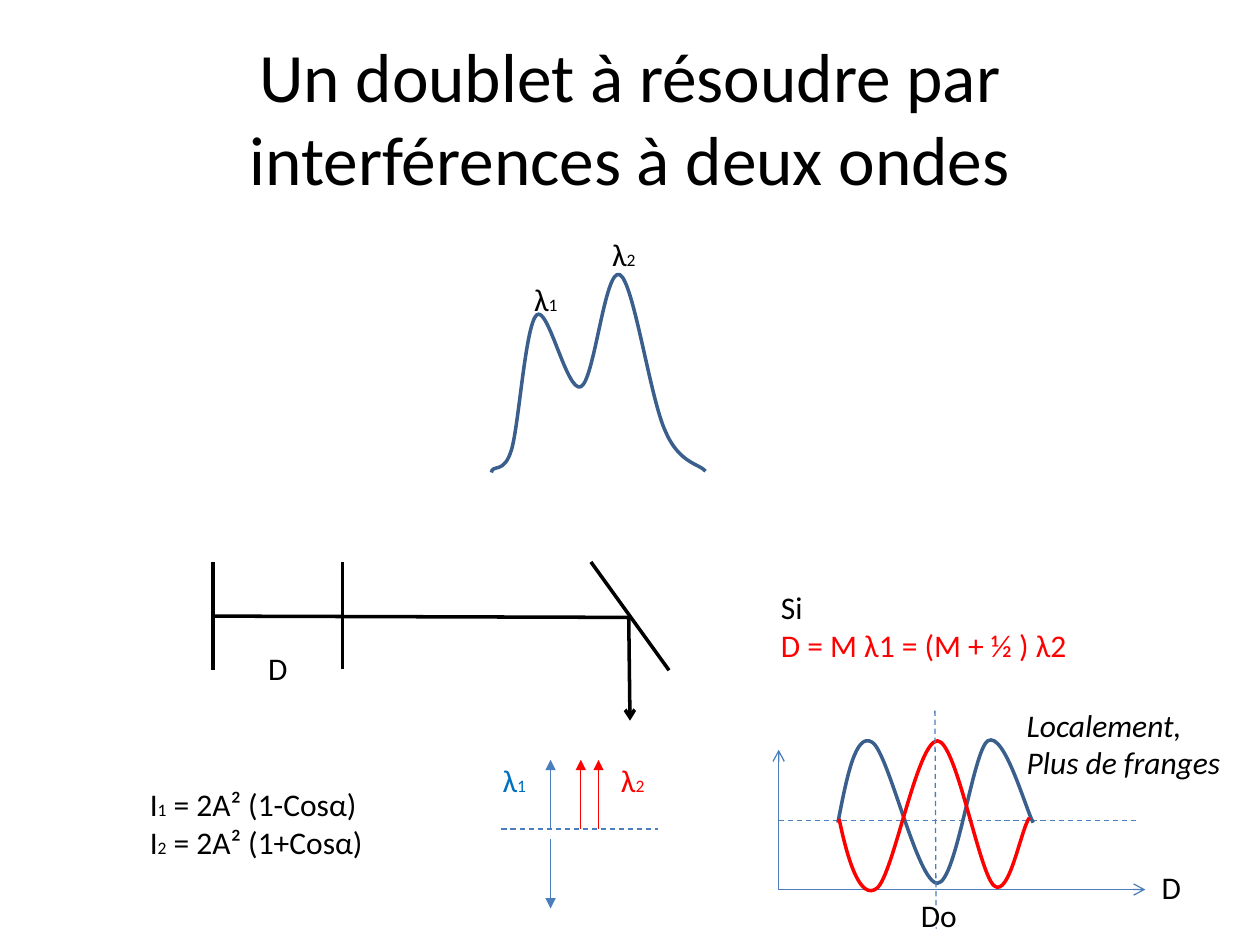
import pptx
import pptx.util
import pptx.dml.color
import pptx.enum.dml
import pptx.enum.shapes
import pptx.enum.text
import pptx.oxml
import pptx.oxml.ns
from pptx.util import Inches

RGB = pptx.dml.color.RGBColor
BLACK = RGB(0, 0, 0)
RED = RGB(0xFF, 0, 0)
BLUE = RGB(0x4B, 0x7E, 0xBC)
NAVY = RGB(0x3A, 0x5F, 0x8C)
AZURE = RGB(0, 0x70, 0xC0)
ALIGN = pptx.enum.text.PP_ALIGN
ANCHOR = pptx.enum.text.MSO_ANCHOR
FIT = pptx.enum.text.MSO_AUTO_SIZE


def add_text(slide, box, lines, size=18, align=ALIGN.LEFT, wrap=True,
             italic=False):
    """Add (text, colour) lines; parts between underscores are small."""
    shape = slide.shapes.add_textbox(*map(Inches, box))
    frame = shape.text_frame
    frame.word_wrap = wrap
    frame.auto_size = FIT.SHAPE_TO_FIT_TEXT
    for i, (text, color) in enumerate(lines):
        para = frame.paragraphs[0] if i == 0 else frame.add_paragraph()
        para.alignment = align
        for j, part in enumerate(text.split("_")):
            if not part:
                continue
            run = para.add_run()
            run.text = part
            run.font.name = "Calibri"
            run.font.size = pptx.util.Pt(10 if j % 2 else size)
            run.font.italic = italic
            run.font.color.rgb = color
    return frame


def add_line(slide, start, end, color=BLUE, width=0.75, dash=False, tip=None):
    """Add a straight line, with an arrowhead at its end if tip is given."""
    line = slide.shapes.add_connector(
        pptx.enum.shapes.MSO_CONNECTOR.STRAIGHT, *map(Inches, start + end))
    line.line.color.rgb = color
    line.line.width = pptx.util.Pt(width)
    if dash:
        line.line.dash_style = pptx.enum.dml.MSO_LINE.DASH
    props = line.element.spPr
    if tip:
        head = pptx.oxml.ns.qn("a:tailEnd")
        line.line.fill  # noqa: the a:ln element already exists here
        props.find(pptx.oxml.ns.qn("a:ln")).append(
            props.makeelement(head, {"type": tip}))
    props.append(props.makeelement(pptx.oxml.ns.qn("a:effectLst"), {}))


def add_curve(slide, start, bends, color):
    """Add a curve; each bend is two control points and an end point."""
    ends = [(Inches(x), Inches(y)) for *_, x, y in bends]
    form = slide.shapes.build_freeform(*map(Inches, start))
    form.add_line_segments(ends, close=False)
    shape = form.convert_to_shape()
    shape.shadow.inherit = False
    shape.fill.background()
    shape.line.color.rgb = color
    shape.line.width = pptx.util.Pt(2)
    qn = pptx.oxml.ns.qn
    steps = list(shape.element.iter(qn("a:lnTo")))
    for step, bend in zip(steps, bends):
        cubic = step.makeelement(qn("a:cubicBezTo"), {})
        for x, y in zip(bend[::2], bend[1::2]):
            cubic.append(step.makeelement(qn("a:pt"), {
                "x": str(Inches(x) - shape.left),
                "y": str(Inches(y) - shape.top)}))
        step.getparent().replace(step, cubic)


def draw_peaks(slide):
    add_curve(slide, (3.9, 3.75), [
        (3.91, 3.68, 4, 3.77, 4.06, 3.57),
        (4.12, 3.37, 4.17, 2.58, 4.26, 2.5),
        (4.35, 2.42, 4.5, 3.12, 4.61, 3.07),
        (4.72, 3.02, 4.8, 2.12, 4.92, 2.18),
        (5.03, 2.24, 5.16, 3.16, 5.28, 3.42),
        (5.39, 3.68, 5.55, 3.68, 5.6, 3.74)], NAVY)
    add_text(slide, (4.14, 2.17, 0.47, 0.4), [("λ_1", BLACK)])
    add_text(slide, (4.76, 1.82, 0.47, 0.4), [("λ_2", BLACK)])


def draw_setup(slide):
    for start, end, tip in [
            ((1.69, 4.46), (1.69, 5.32), None),
            ((1.69, 4.89), (5, 4.9), None),
            ((4.69, 4.46), (5.31, 5.32), None),
            ((4.99, 4.89), (5, 5.72), "arrow"),
            ((2.72, 4.46), (2.72, 5.31), None)]:
        add_line(slide, start, end, BLACK, 2, tip=tip)
    add_text(slide, (1.89, 5.1, 0.63, 0.4), [("D", BLACK)],
             align=ALIGN.CENTER)


def draw_phases(slide):
    for x, y, end, color in [(4.37, 6.58, 6.03, BLUE), (4.37, 6.66, 7.21, BLUE),
                             (4.61, 6.58, 6.03, RED), (4.75, 6.58, 6.03, RED)]:
        add_line(slide, (x, y), (x, end), color, tip="triangle")
    add_line(slide, (3.98, 6.58), (5.22, 6.58), dash=True)
    add_text(slide, (3.89, 5.99, 0.39, 0.4), [("λ_1", AZURE)], wrap=False)
    add_text(slide, (4.83, 5.99, 0.47, 0.4), [("λ_2", RED)])


def draw_fringes(slide):
    add_line(slide, (6.18, 7.06), (6.18, 5.95), tip="arrow")
    add_line(slide, (6.18, 7.06), (9.09, 7.06), tip="arrow")
    add_line(slide, (6.18, 6.51), (9.02, 6.51), dash=True)
    add_curve(slide, (6.65, 6.53), [
        (6.72, 6.17, 6.79, 5.81, 6.92, 5.89),
        (7.05, 5.96, 7.28, 7.01, 7.44, 7.01),
        (7.59, 7.01, 7.72, 5.96, 7.84, 5.88),
        (7.97, 5.8, 8.14, 6.42, 8.2, 6.53)], NAVY)
    add_curve(slide, (6.66, 6.5), [
        (6.73, 6.84, 6.83, 7.15, 6.96, 7.05),
        (7.09, 6.95, 7.28, 5.88, 7.44, 5.88),
        (7.59, 5.88, 7.77, 6.93, 7.89, 7.03),
        (8.01, 7.13, 8.1, 6.59, 8.17, 6.49)], RED)
    add_line(slide, (7.42, 5.64), (7.43, 7.37), dash=True)
    add_text(slide, (7.21, 7.06, 0.65, 0.4), [("Do", BLACK)])
    add_text(slide, (9.12, 6.84, 0.39, 0.4), [("D", BLACK)])
    add_text(slide, (8.05, 5.55, 1.77, 0.71),
             [("Localement, Plus de franges", BLACK)], italic=True)


def main():
    deck = pptx.Presentation()
    deck.slide_width, deck.slide_height = Inches(10), Inches(7.5)
    slide = deck.slides.add_slide(deck.slide_layouts[6])
    title = add_text(slide, (0.5, 0.3, 9, 1.25),
                     [("Un doublet à résoudre par interférences à deux ondes",
                       BLACK)], 39.6, ALIGN.CENTER)
    title.auto_size = FIT.NONE
    title.vertical_anchor = ANCHOR.MIDDLE
    draw_peaks(slide)
    draw_setup(slide)
    add_text(slide, (6.1, 4.62, 2.6, 0.71),
             [("Si", BLACK), ("D = M λ1 = (M + ½ ) λ2", RED)])
    draw_phases(slide)
    draw_fringes(slide)
    add_text(slide, (1.09, 6.18, 2.68, 0.71),
             [("I_1_ = 2A² (1-Cosα)", BLACK), ("I_2_ = 2A² (1+Cosα)", BLACK)])
    deck.save("out.pptx")


if __name__ == "__main__":
    main()
